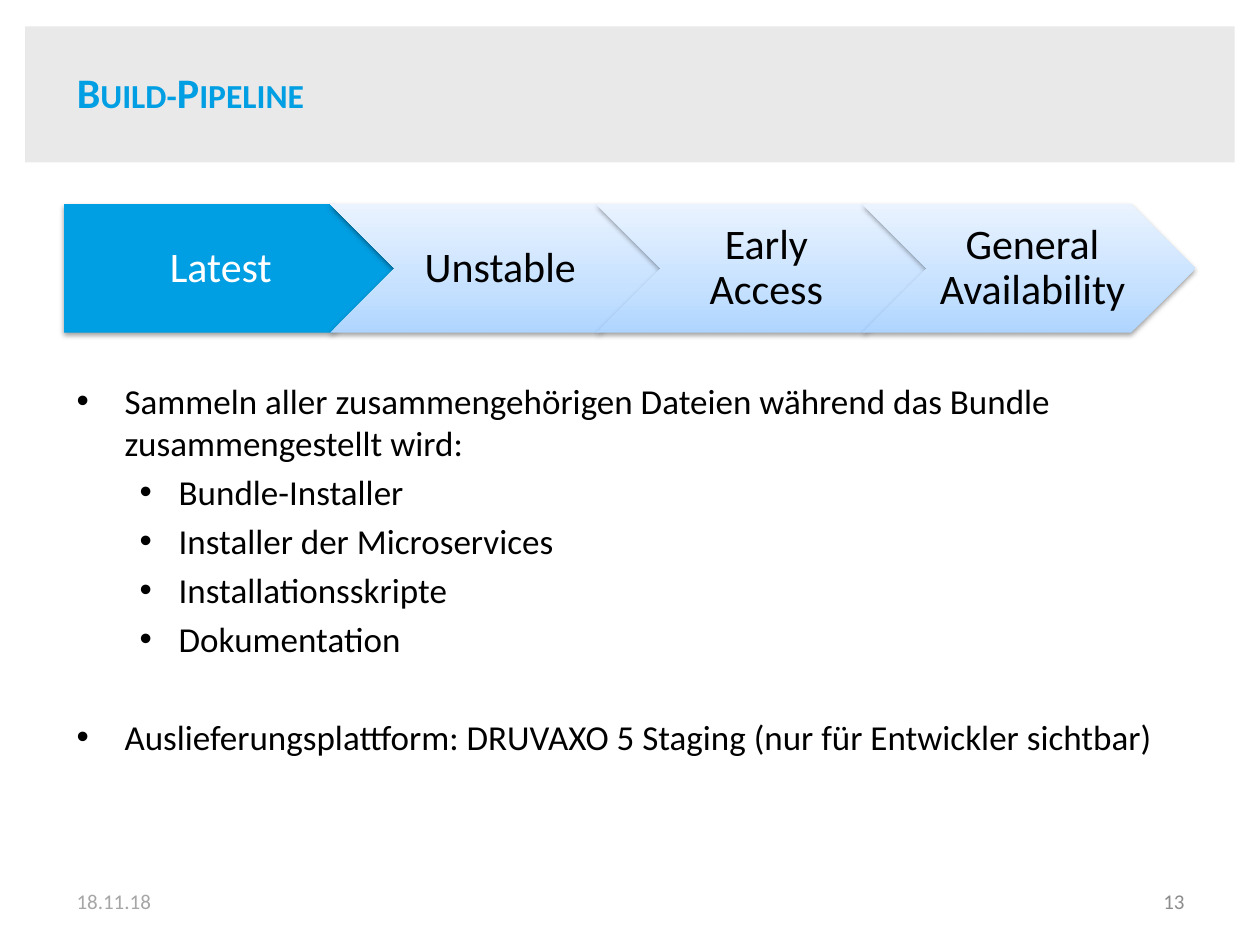
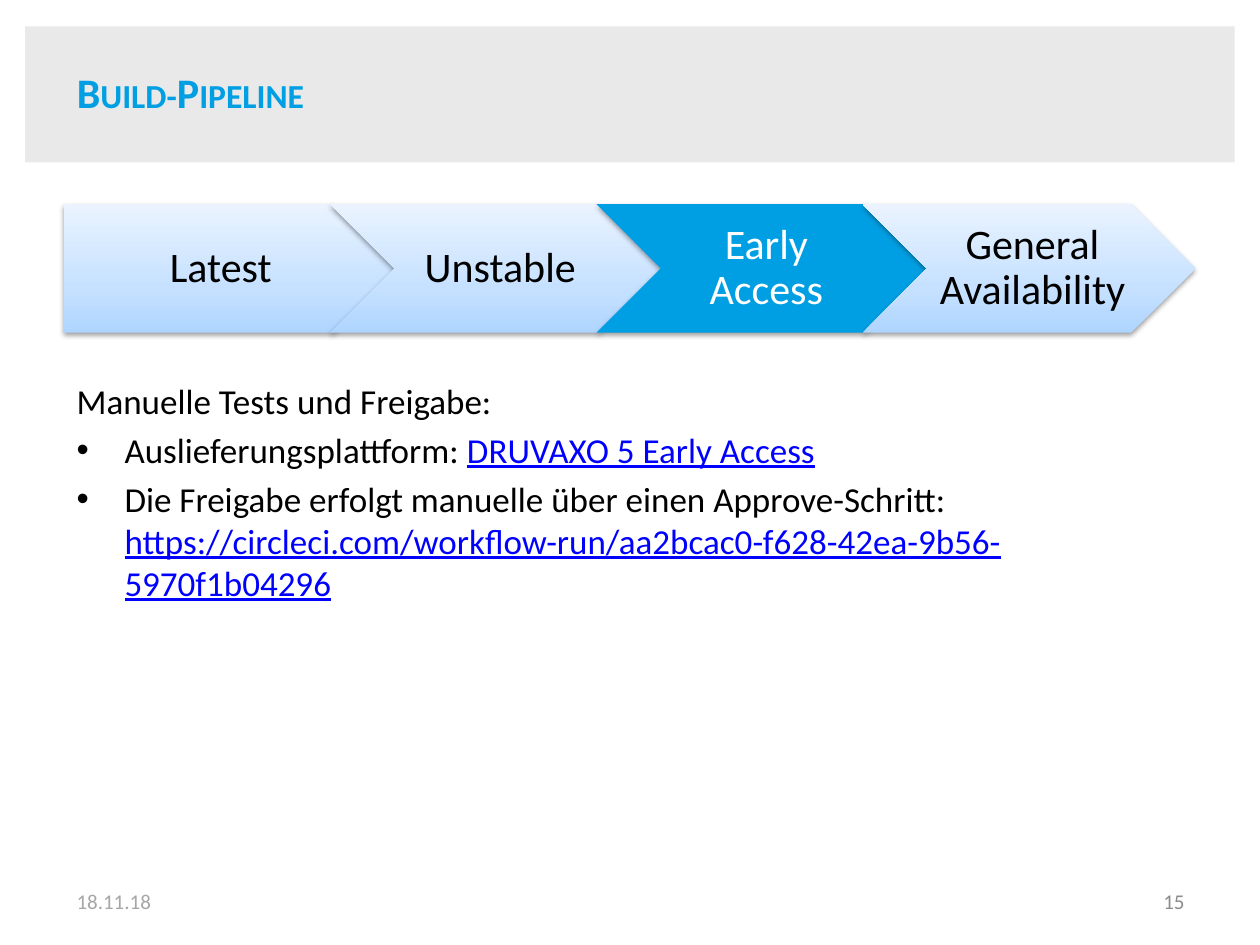
"""Build two slides on the stages of a build pipeline."""
from lxml.etree import SubElement as Sub
from pptx import Presentation
from pptx.dml.color import RGBColor as RGB
from pptx.enum.shapes import MSO_SHAPE as Kind
from pptx.enum.text import MSO_ANCHOR as Anchor, PP_ALIGN as Align
from pptx.oxml.ns import qn
from pptx.util import Inches, Pt

TITLE = "Build-Pipeline"
DATE = "18.11.18"
STAGES = ["Latest", "Unstable", "Early Access", "General Availability"]
PLAIN, MAIN, SUB = "plain", "main", "sub"
SLIDES = [
    {"page": "13", "stage": "Latest", "body": [
        (MAIN, 0, ["Sammeln aller zusammengehörigen Dateien während das Bundle "
                   "zusammengestellt wird:"], None),
        (SUB, 4, ["Bundle-Installer"], None),
        (SUB, 4, ["Installer der Microservices"], None),
        (SUB, 4, ["Installationsskripte"], None),
        (SUB, 4, ["Dokumentation"], None),
        (MAIN, 32, ["Auslieferungsplattform: DRUVAXO 5 Staging "
                    "(nur für Entwickler sichtbar)"], None),
    ]},
    {"page": "15", "stage": "Early Access", "body": [
        (PLAIN, 0, ["Manuelle Tests und Freigabe:"], None),
        (MAIN, 4, ["Auslieferungsplattform: "], "DRUVAXO 5 Early Access"),
        (MAIN, 4, ["Die Freigabe erfolgt manuelle über einen Approve-Schritt:", "\n"],
         "https://circleci.com/workflow-run/aa2bcac0-f628-42ea-9b56-5970f1b04296"),
    ]},
]

FONT = "Calibri"
BLUE = RGB(0x00, 0x9E, 0xE2)
BAND = RGB(0xE9, 0xE9, 0xEA)
BLACK = RGB(0, 0, 0)
WHITE = RGB(255, 255, 255)
LINK = RGB(0, 0, 255)
PALE = RGB(0xA6, 0xA6, 0xA6)
GREY = RGB(0x8C, 0x8C, 0x8C)
FADE = [(0, RGB(0xAF, 0xD5, 0xFF)), (35, RGB(0xC6, 0xE1, 0xFF)), (100, RGB(0xEA, 0xF3, 0xFF))]
INDENT = {PLAIN: (0.38, -0.38), MAIN: (0.38, -0.38), SUB: (0.81, -0.31)}
LEFT, TOP, WIDE, HIGH = 0.51, 1.62, 2.64, 1.02
STEP = 0.8 * WIDE


def write(par, text, size, color):
    """Add one run and return its font."""
    run = par.add_run()
    run.text = text
    font = run.font
    font.name, font.size, font.color.rgb = FONT, Pt(size), color
    return font


def text_box(slide, *area):
    """Add a wrapping text box and return its frame."""
    frame = slide.shapes.add_textbox(*map(Inches, area)).text_frame
    frame.word_wrap = True
    return frame


def add_shape(slide, kind, *area):
    """Add a shape with neither line nor shadow."""
    shape = slide.shapes.add_shape(kind, *map(Inches, area))
    shape.shadow.inherit = False
    shape.line.fill.background()
    return shape


def add_color(parent, color):
    """Add an RGB colour element."""
    return Sub(parent, qn("a:srgbClr"), val=str(color))


def paint(shape, color):
    """Fill a shape with one colour."""
    shape.fill.solid()
    shape.fill.fore_color.rgb = color


def fade(shape):
    """Fill a shape with the vertical pale blue gradient."""
    shape.fill.gradient()
    shape.fill.gradient_angle = 90
    stops = shape.element.spPr.find(".//" + qn("a:gsLst"))
    for stop in list(stops):
        stops.remove(stop)
    for pos, color in FADE:
        add_color(Sub(stops, qn("a:gs"), pos=str(pos * 1000)), color)


def shade(shape):
    """Give a shape a soft shadow below it."""
    effects = shape.element.spPr.find(qn("a:effectLst"))
    drop = Sub(effects, qn("a:outerShdw"), blurRad=str(Pt(3.1)), dist=str(Pt(1.6)),
               dir="5400000", rotWithShape="0")
    Sub(add_color(drop, BLACK), qn("a:alpha"), val="38000")


def add_head(slide):
    """Add the title on its grey band."""
    title = slide.shapes.title
    band = add_shape(slide, Kind.RECTANGLE, 0.2, 0.21, 9.6, 1.08)
    paint(band, BAND)
    title.element.addprevious(band.element)
    title.left, title.top, title.width, title.height = map(Inches, (LEFT, 0.29, 6.85, 0.87))
    frame = title.text_frame
    frame.vertical_anchor = Anchor.MIDDLE
    par = frame.paragraphs[0]
    par.alignment = Align.LEFT
    font = write(par, TITLE, 24, BLUE)
    font.bold = True
    par.runs[0].font.size = Pt(24)
    par.runs[0]._r.get_or_add_rPr().set("cap", "small")


def add_stages(slide, now):
    """Add the chain of stages with the current one in blue."""
    for i, name in enumerate(STAGES):
        kind = Kind.CHEVRON if i else Kind.PENTAGON
        shape = add_shape(slide, kind, LEFT + i * STEP, TOP, WIDE, HIGH)
        if name == now:
            paint(shape, BLUE)
        else:
            fade(shape)
        shade(shape)
        frame = shape.text_frame
        frame.word_wrap = True
        frame.vertical_anchor = Anchor.MIDDLE
        frame.margin_left = Inches(0.1 if i else 0.14)
        frame.margin_right = Inches(0.04)
        frame.margin_top = frame.margin_bottom = Inches(0.07)
        par = frame.paragraphs[0]
        par.alignment, par.line_spacing = Align.CENTER, 0.9
        write(par, name, 24, WHITE if name == now else BLACK)


def add_body(slide, items):
    """Add the bulleted text."""
    frame = text_box(slide, LEFT, 2.96, 8.98, 3.54)
    for i, (level, gap, parts, link) in enumerate(items):
        par = frame.add_paragraph() if i else frame.paragraphs[0]
        props = par._p.get_or_add_pPr()
        left, hang = INDENT[level]
        props.set("marL", str(Inches(left)))
        props.set("indent", str(Inches(hang)))
        if level != PLAIN:
            Sub(props, qn("a:buFont"), typeface="Arial")
            Sub(props, qn("a:buChar"), char="•")
        par.space_before = Pt(gap)
        for part in parts:
            if part == "\n":
                par.add_line_break()
            else:
                write(par, part, 20, BLACK)
        if link:
            write(par, link, 20, LINK).underline = True


def add_foot(slide, page):
    """Add the date and the page number."""
    for text, left, wide, side, color in [
        (DATE, LEFT, 2.2, Align.LEFT, PALE),
        (page, 7.17, 2.33, Align.RIGHT, GREY),
    ]:
        frame = text_box(slide, left, 6.95, wide, 0.4)
        frame.vertical_anchor = Anchor.MIDDLE
        par = frame.paragraphs[0]
        par.alignment = side
        write(par, text, 12, color)


def main():
    """Build and save the slides."""
    deck = Presentation()
    deck.slide_width, deck.slide_height = Inches(10), Inches(7.5)
    for data in SLIDES:
        slide = deck.slides.add_slide(deck.slide_layouts[5])
        add_head(slide)
        add_body(slide, data["body"])
        add_foot(slide, data["page"])
        add_stages(slide, data["stage"])
    deck.save("out.pptx")


if __name__ == "__main__":
    main()
